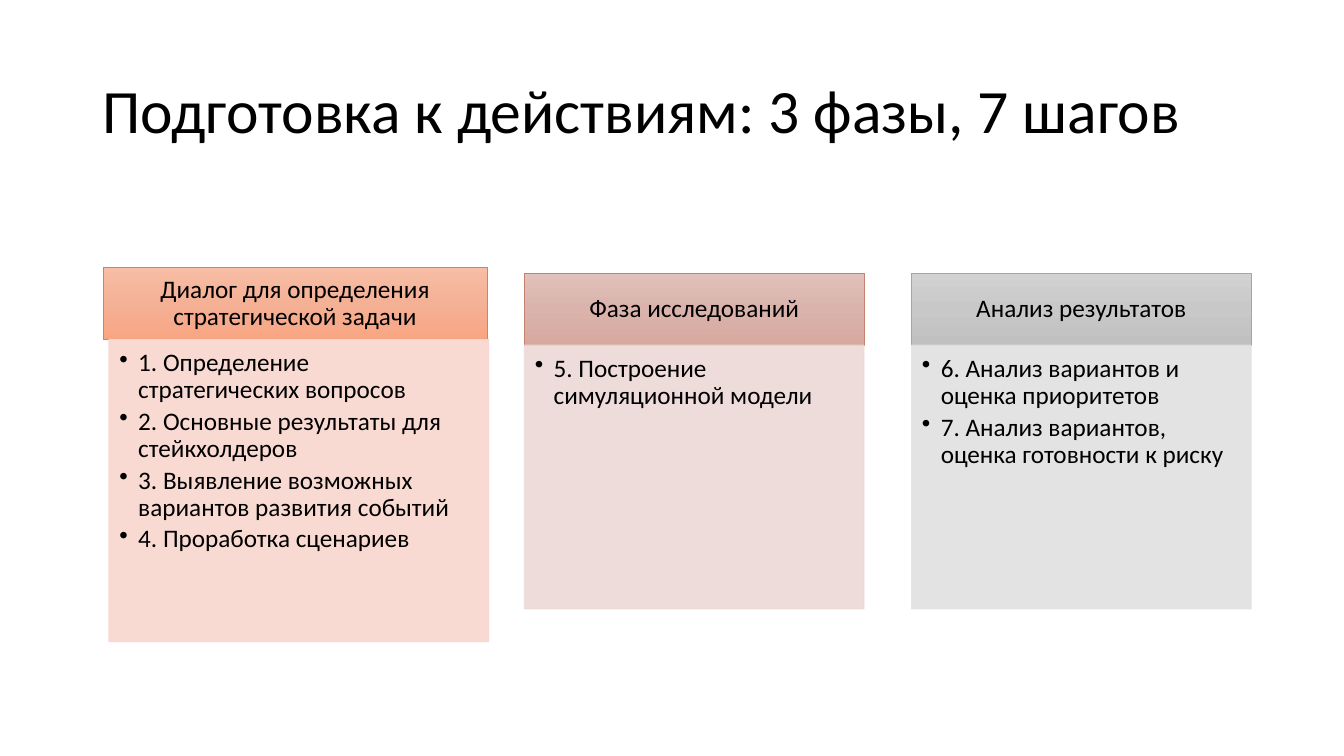
from copy import deepcopy
from dataclasses import dataclass

from lxml.etree import SubElement
from pptx import Presentation
from pptx.dml.color import RGBColor
from pptx.enum.shapes import MSO_SHAPE
from pptx.enum.text import MSO_ANCHOR, PP_ALIGN
from pptx.oxml.ns import qn
from pptx.util import Pt


@dataclass(frozen=True)
class Theme:
    font: str = "Calibri"
    text: str = "000000"
    title_size: float = 44
    body_size: float = 18
    line_width: float = 0.5
    line_spacing: float = 0.9
    # Each palette: header gradient, header border, body fill
    orange: tuple = (("F7BDA5", "F5B196", "F8A582"), "ED7D31", "F8D7CE")
    rose: tuple = (("E0C0B9", "DAB4AC", "D7A89E"), "C48170", "EDD9D7")
    gray: tuple = (("D2D2D2", "C8C8C8", "C0C0C0"), "A5A5A5", "E1E1E1")


class SlideBuilder:
    def __init__(self, slide, theme):
        self.slide = slide
        self.theme = theme

    def add_lines(self, shape, lines, size, insets, anchor, align, after=0, bullet_indent=0):
        """Fill a shape with paragraphs, bulleted if an indent is given."""
        frame = shape.text_frame
        frame.word_wrap = True
        frame.vertical_anchor = anchor
        for side, inset in zip(("left", "top", "right", "bottom"), insets):
            setattr(frame, f"margin_{side}", Pt(inset))
        paragraph_format = {"alignment": align, "line_spacing": self.theme.line_spacing,
                            "space_after": Pt(after)}
        font_format = {"name": self.theme.font, "size": Pt(size)}
        for number, line in enumerate(lines):
            paragraph = frame.add_paragraph() if number else frame.paragraphs[0]
            paragraph.text = line
            for name, value in paragraph_format.items():
                setattr(paragraph, name, value)
            if bullet_indent:
                properties = paragraph._p.get_or_add_pPr()
                properties.set("marL", str(Pt(bullet_indent)))
                properties.set("indent", str(-Pt(bullet_indent)))
                SubElement(properties, qn("a:buChar"), char="•")
            for name, value in font_format.items():
                setattr(paragraph.font, name, value)
            paragraph.font.color.rgb = RGBColor.from_string(self.theme.text)

    def title(self, text, box):
        heading = self.slide.shapes.add_textbox(*map(Pt, box))
        self.add_lines(heading, [text], self.theme.title_size, (7.2, 3.6, 7.2, 3.6),
                       MSO_ANCHOR.MIDDLE, PP_ALIGN.LEFT)

    def rectangle(self, box, border):
        panel = self.slide.shapes.add_shape(MSO_SHAPE.RECTANGLE, *map(Pt, box))
        panel.shadow.inherit = False
        panel.line.color.rgb = RGBColor.from_string(border)
        panel.line.width = Pt(self.theme.line_width)
        return panel

    def phase_header(self, text, box, gradient, border):
        header = self.rectangle(box, border)
        header.fill.gradient()
        header.fill.gradient_angle = 270
        # A third stop goes between the two default ones
        stop_list = header._element.spPr.find(qn("a:gradFill")).find(qn("a:gsLst"))
        stop_list.insert(1, deepcopy(stop_list[0]))
        for stop, color, position in zip(header.fill.gradient_stops, gradient, (0, 0.5, 1)):
            stop.color.rgb = RGBColor.from_string(color)
            stop.position = position
        self.add_lines(header, [text], self.theme.body_size, (10, 6, 10, 6),
                       MSO_ANCHOR.MIDDLE, PP_ALIGN.CENTER)

    def phase_steps(self, steps, box, color):
        body = self.rectangle(box, color)
        body.fill.solid()
        body.fill.fore_color.rgb = RGBColor.from_string(color)
        # Fill and border are both 90% opaque
        for tint in body._element.spPr.iter(qn("a:srgbClr")):
            SubElement(tint, qn("a:alpha"), val="90000")
        self.add_lines(body, steps, self.theme.body_size, (7.5, 7.5, 10, 11.5),
                       MSO_ANCHOR.TOP, PP_ALIGN.LEFT, after=3, bullet_indent=13.5)


def main():
    theme = Theme()
    presentation = Presentation()
    presentation.slide_width, presentation.slide_height = Pt(960), Pt(540)
    builder = SlideBuilder(
        presentation.slides.add_slide(presentation.slide_layouts[6]), theme)

    builder.title("Подготовка к действиям: 3 фазы, 7 шагов", (66, 28.8, 828, 104.4))

    # Phases: name, steps, palette, header (left, top, width), body (left, width, height)
    phases = [
        ("Диалог для определения стратегической задачи",
         ["1. Определение стратегических вопросов",
          "2. Основные результаты для стейкхолдеров",
          "3. Выявление возможных вариантов развития событий",
          "4. Проработка сценариев"],
         theme.orange, (73.5, 191, 274.5), (77.75, 271.5, 216)),
        ("Фаза исследований",
         ["5. Построение симуляционной модели"],
         theme.rose, (374.5, 195, 242.75), (374.5, 242.75, 188.5)),
        ("Анализ результатов",
         ["6. Анализ вариантов и оценка приоритетов",
          "7. Анализ вариантов, оценка готовности к риску"],
         theme.gray, (651, 195, 242.75), (651, 242.75, 188.5)),
    ]
    header_height = 51.5
    for name, steps, palette, header, (body_left, body_width, body_height) in phases:
        gradient, border, body_color = palette
        builder.phase_header(name, (*header, header_height), gradient, border)
        body_top = header[1] + header_height
        builder.phase_steps(steps, (body_left, body_top, body_width, body_height), body_color)

    presentation.save("out.pptx")


if __name__ == "__main__":
    main()
